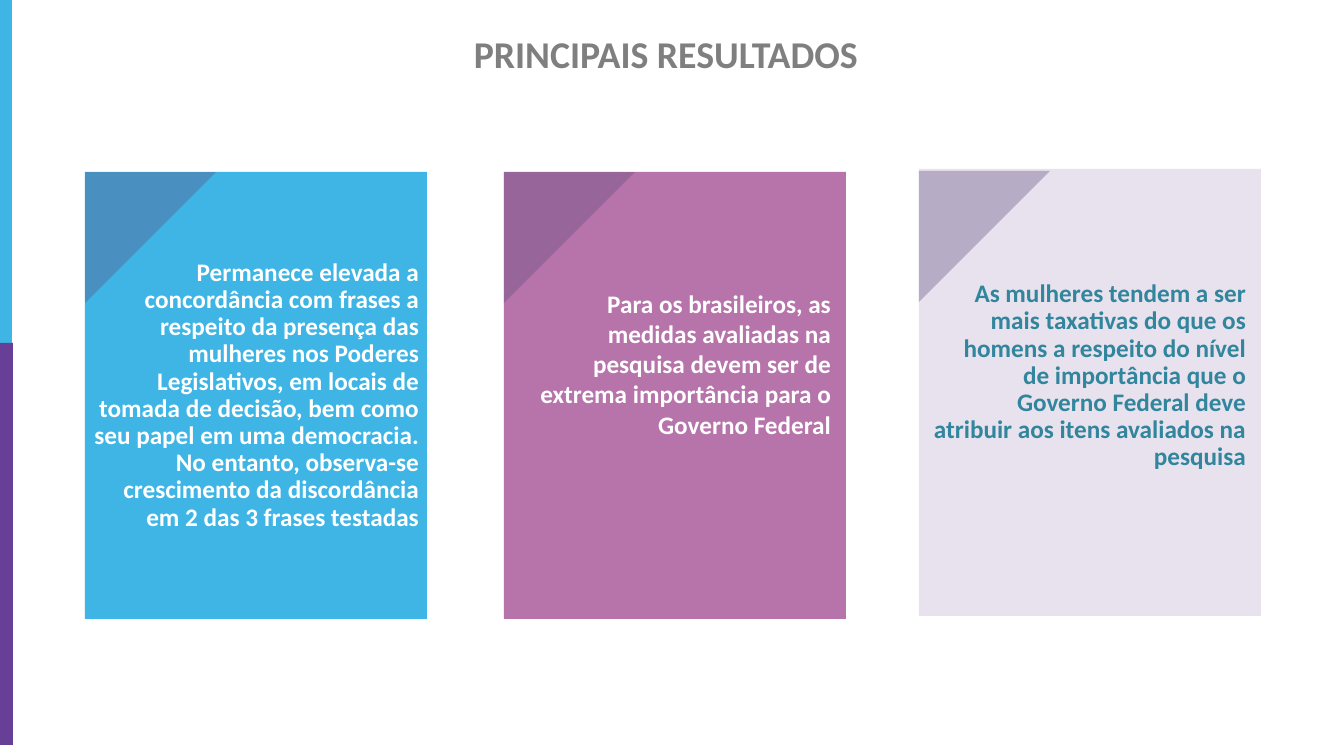
from dataclasses import dataclass

from lxml.etree import SubElement
from pptx import Presentation
from pptx.dml.color import RGBColor
from pptx.enum.shapes import MSO_SHAPE
from pptx.enum.text import MSO_ANCHOR, PP_ALIGN
from pptx.oxml.ns import qn
from pptx.util import Emu, Pt

EMU_PER_PX = 914400 / 75.6
SLIDE_WIDTH, SLIDE_HEIGHT = 1344, 745


def px(length):
    return Emu(round(length * EMU_PER_PX))


@dataclass(frozen=True)
class Theme:
    font: str = "Calibri"
    title_size: int = 36
    body_size: int = 24
    blue: str = "3EB5E5"
    purple: str = "673F96"
    pink: str = "AF65A1"
    lilac: str = "B3A2C7"
    fold: str = "604A7B"
    white: str = "FFFFFF"
    teal: str = "31859C"
    gray: str = "7F7F7F"


class SlideBuilder:
    def __init__(self, slide, theme):
        self.slide = slide
        self.theme = theme

    def block(self, left, top, width, height, color, opacity=100,
              preset=MSO_SHAPE.RECTANGLE):
        shape = self.slide.shapes.add_shape(
            preset, px(left), px(top), px(width), px(height))
        shape.shadow.inherit = False
        shape.line.fill.background()
        shape.fill.solid()
        shape.fill.fore_color.rgb = RGBColor.from_string(color)
        if opacity < 100:
            color_element = shape.element.spPr.find(qn("a:solidFill"))[0]
            SubElement(color_element, qn("a:alpha"), val=str(opacity * 1000))
        return shape

    def set_text(self, shape, text, size, color, alignment, anchor, insets, spacing=1.0):
        frame = shape.text_frame
        frame.word_wrap = True
        frame.vertical_anchor = anchor
        (frame.margin_left, frame.margin_top,
         frame.margin_right, frame.margin_bottom) = map(px, insets)
        paragraph = frame.paragraphs[0]
        paragraph.text = text
        paragraph.alignment = alignment
        paragraph.line_spacing = spacing
        paragraph.font.name = self.theme.font
        paragraph.font.size = Pt(size)
        paragraph.font.bold = True
        paragraph.font.color.rgb = RGBColor.from_string(color)

    def title(self, text):
        box = self.slide.shapes.add_textbox(px(61), px(23), px(1210), px(60))
        self.set_text(box, text, self.theme.title_size, self.theme.gray,
                      PP_ALIGN.CENTER, MSO_ANCHOR.MIDDLE, (14, 7, 14, 7))

    def card(self, left, top, fold_top, color, opacity, text, text_color,
             anchor, insets, spacing):
        shape = self.block(left, top, 342, 447, color, opacity)
        self.set_text(shape, text, self.theme.body_size, text_color,
                      PP_ALIGN.RIGHT, anchor, insets, spacing)
        fold = self.block(left, fold_top, 131, 131, self.theme.fold, 35,
                          MSO_SHAPE.DIAGONAL_STRIPE)
        fold.adjustments[0] = 0


def main():
    presentation = Presentation()
    presentation.slide_width = px(SLIDE_WIDTH)
    presentation.slide_height = px(SLIDE_HEIGHT)
    theme = Theme()
    slide = presentation.slides.add_slide(presentation.slide_layouts[6])
    builder = SlideBuilder(slide, theme)

    # Side band
    builder.block(0, 0, 12, SLIDE_HEIGHT, theme.blue)
    builder.block(0, 343, 13, SLIDE_HEIGHT - 343, theme.purple)

    # Title
    builder.title("PRINCIPAIS RESULTADOS")

    # Result cards with folded corners
    builder.card(
        85, 172, 172, theme.blue, 100,
        "Permanece elevada a concordância com frases a respeito da presença das "
        "mulheres nos Poderes Legislativos, em locais de tomada de decisão, bem "
        "como seu papel em uma democracia. No entanto, observa-se crescimento da "
        "discordância em 2 das 3 frases testadas",
        theme.white, MSO_ANCHOR.MIDDLE, (8, 4, 8, 4), 0.9)
    builder.card(
        504, 172, 172, theme.pink, 90,
        "Para os brasileiros, as medidas avaliadas na pesquisa devem ser de "
        "extrema importância para o Governo Federal",
        theme.white, MSO_ANCHOR.TOP, (15, 116, 15, 15), 1.0)
    builder.card(
        919, 169, 171, theme.lilac, 31,
        "As mulheres tendem a ser mais taxativas do que os homens a respeito do "
        "nível de importância que o Governo Federal deve atribuir aos itens "
        "avaliados na pesquisa",
        theme.teal, MSO_ANCHOR.TOP, (15, 112, 15, 15), 0.9)

    presentation.save("out.pptx")


if __name__ == "__main__":
    main()
